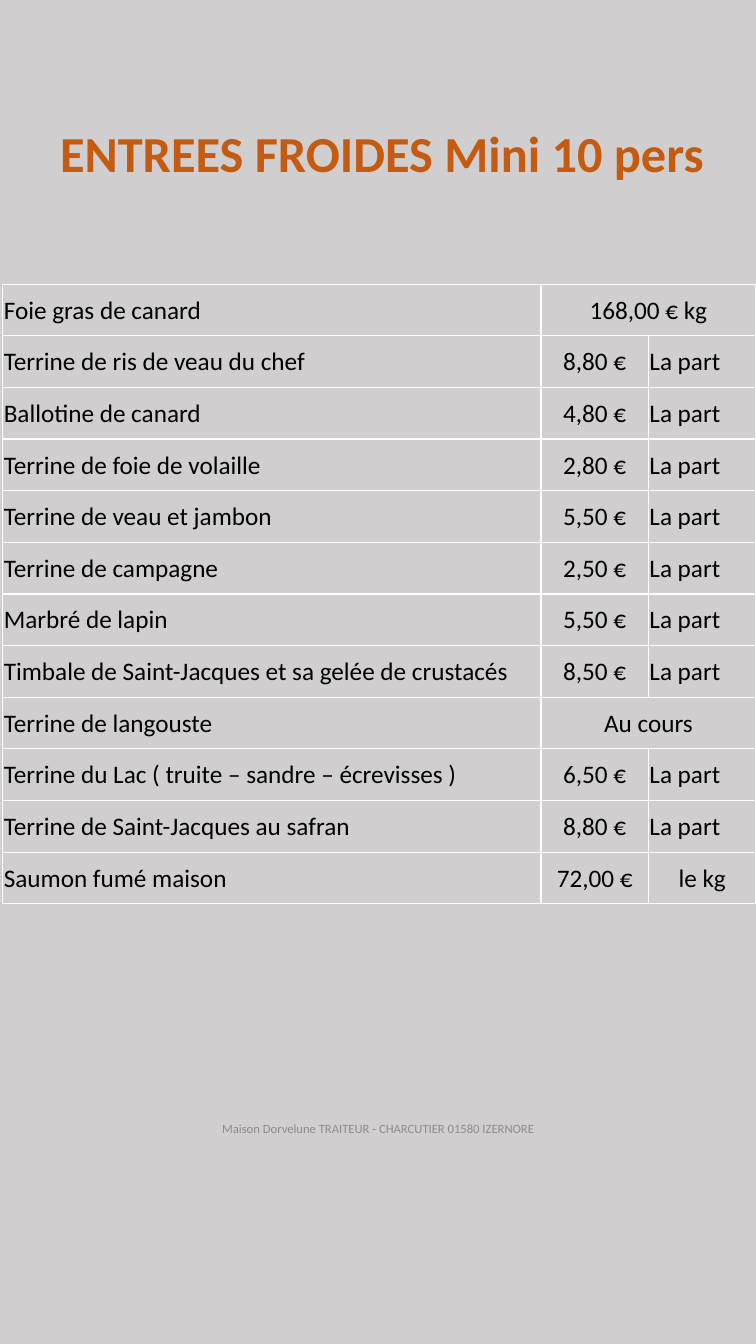
from lxml import etree
from pptx import Presentation
from pptx.dml.color import RGBColor
from pptx.enum.text import MSO_ANCHOR as ANCHOR, PP_ALIGN as ALIGN
from pptx.oxml.ns import qn
from pptx.util import Pt

COLORS = {
    "background": "D0CECE",
    "title": "C55A11",
    "footer": "8C8C8C",
    "text": "000000",
    "border": "FFFFFF",
}
FONT = "Calibri"
PORTION = "La part"
# Dish, price, unit; a price without a unit spans both columns.
DISHES = [
    ("Foie gras de canard", "168,00 € kg", None),
    ("Terrine de ris de veau du chef", "8,80 €", PORTION),
    ("Ballotine de canard", "4,80 €", PORTION),
    ("Terrine de foie de volaille", "2,80 €", PORTION),
    ("Terrine de veau et jambon", "5,50 €", PORTION),
    ("Terrine de campagne", "2,50 €", PORTION),
    ("Marbré de lapin", "5,50 €", PORTION),
    ("Timbale de Saint-Jacques et sa gelée de crustacés", "8,50 €", PORTION),
    ("Terrine de langouste", "Au cours", None),
    ("Terrine du Lac ( truite – sandre – écrevisses )", "6,50 €", PORTION),
    ("Terrine de Saint-Jacques au safran", "8,80 €", PORTION),
    ("Saumon fumé maison", "72,00 €", "le kg"),
]
COLUMN_WIDTHS = [384.4, 76.8, 76.8]
ROW_HEIGHT = 36.9


def rgb(name):
    return RGBColor.from_string(COLORS[name])


def write(tf, text, size, color, align, bold=False):
    tf.text = text
    p = tf.paragraphs[0]
    p.alignment = align
    for r in p.runs:
        r.font.name = FONT
        r.font.size = Pt(size)
        r.font.bold = bold
        r.font.color.rgb = rgb(color)


def add_text(slide, box, text, size, color, anchor, bold=False):
    tf = slide.shapes.add_textbox(*map(Pt, box)).text_frame
    tf.word_wrap = True
    tf.vertical_anchor = anchor
    write(tf, text, size, color, ALIGN.CENTER, bold)


def style_cell(cell):
    """Set borders before the fill, as the schema orders them."""
    tc_pr = cell._tc.get_or_add_tcPr()
    for side in ("lnL", "lnR", "lnT", "lnB"):
        ln = etree.SubElement(tc_pr, qn(f"a:{side}"), w=str(Pt(1)))
        fill = etree.SubElement(ln, qn("a:solidFill"))
        etree.SubElement(fill, qn("a:srgbClr"), val=COLORS["border"])
    cell.fill.solid()
    cell.fill.fore_color.rgb = rgb("background")
    cell.vertical_anchor = ANCHOR.MIDDLE
    cell.margin_left = cell.margin_right = cell.margin_top = Pt(0.72)
    cell.margin_bottom = 0


def add_price_table(slide, left, top):
    table = slide.shapes.add_table(
        len(DISHES), len(COLUMN_WIDTHS), Pt(left), Pt(top),
        Pt(sum(COLUMN_WIDTHS)), Pt(ROW_HEIGHT * len(DISHES))).table
    table.first_row = table.horz_banding = False
    for column, width in zip(table.columns, COLUMN_WIDTHS):
        column.width = Pt(width)
    for i, dish in enumerate(DISHES):
        table.rows[i].height = Pt(ROW_HEIGHT)
        for j, text in enumerate(dish):
            cell = table.cell(i, j)
            style_cell(cell)
            if text is None:
                table.cell(i, j - 1).merge(cell)
                continue
            left_aligned = j == 0 or text == PORTION
            write(cell.text_frame, text, 18, "text",
                  ALIGN.LEFT if left_aligned else ALIGN.CENTER)


def main():
    prs = Presentation()
    prs.slide_width, prs.slide_height = Pt(540), Pt(960)
    slide = prs.slides.add_slide(prs.slide_layouts[6])
    slide.background.fill.solid()
    slide.background.fill.fore_color.rgb = rgb("background")

    add_text(slide, (23, 84, 500, 51), "ENTREES FROIDES Mini 10 pers",
             36, "title", ANCHOR.TOP, bold=True)
    add_price_table(slide, 2, 203)
    add_text(slide, (108, 780.5, 324, 51),
             "Maison Dorvelune TRAITEUR - CHARCUTIER 01580 IZERNORE",
             9, "footer", ANCHOR.MIDDLE)
    prs.save("out.pptx")


if __name__ == "__main__":
    main()
